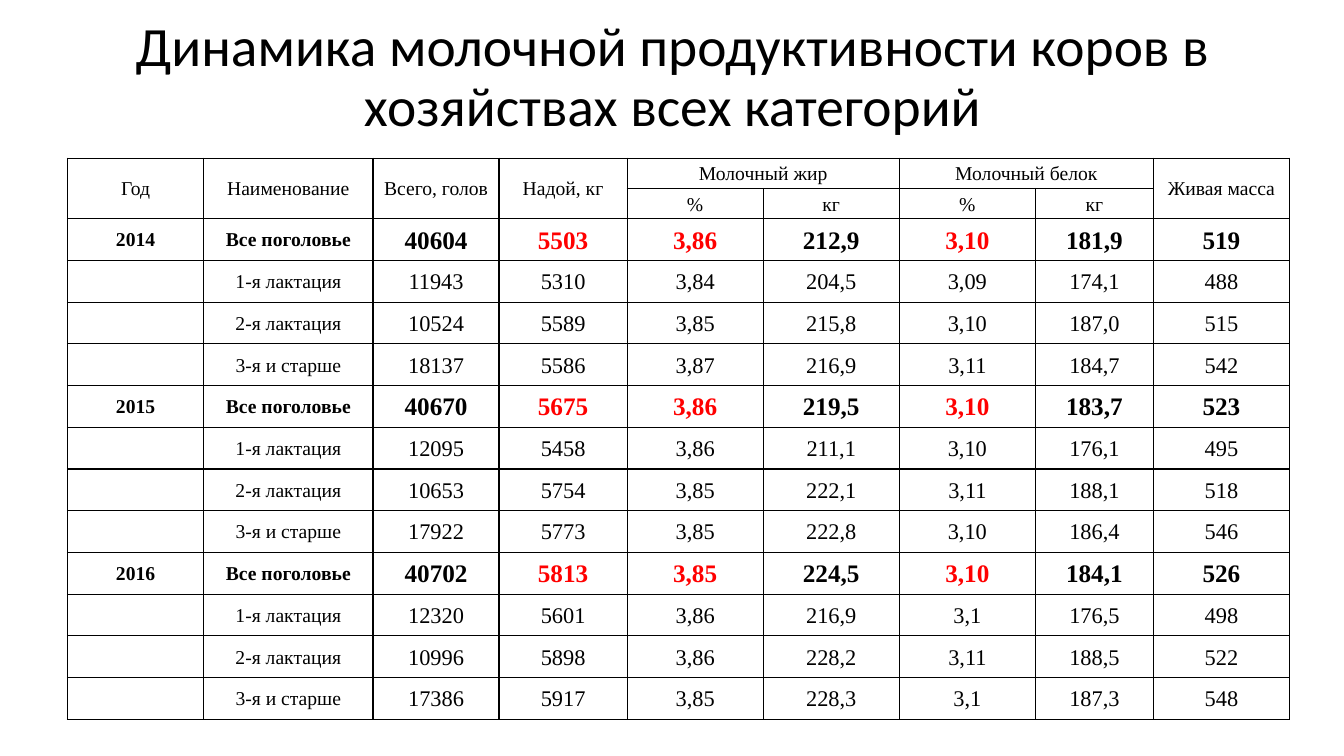
import dataclasses

import lxml.etree
import pptx
import pptx.dml.color
import pptx.enum.text
import pptx.oxml.ns
import pptx.util

Inches = pptx.util.Inches


@dataclasses.dataclass(frozen=True)
class Theme:
    """Hold the colours, fonts and type sizes of the slide."""
    black: str = "000000"
    red: str = "FF0000"
    head: str = "Calibri"
    body: str = "Times New Roman"
    title: float = 39.6
    label: float = 14
    value: float = 16
    total: float = 18
    rule: float = 1


THEME = Theme()
TITLE = "Динамика молочной продуктивности коров в хозяйствах всех категорий"
COLS = (1.35, 1.68, 1.25, 1.27, 1.35, 1.35, 1.35, 1.17, 1.35)
HEADS = (
    ("Год", "Наименование", "Всего, голов", "Надой, кг", "Молочный жир", "",
     "Молочный белок", "", "Живая масса"),
    ("", "", "", "", "%", "кг", "%", "кг", ""),
)
MERGES = [(0, col, 1, col) for col in (0, 1, 2, 3, 8)]
MERGES += [(0, col, 0, col + 1) for col in (4, 6)]
GROUPS = ("Все поголовье", "1-я лактация", "2-я лактация", "3-я и старше")
HERD = {
    "2014": ("40604 5503 3,86 212,9 3,10 181,9 519",
             "11943 5310 3,84 204,5 3,09 174,1 488",
             "10524 5589 3,85 215,8 3,10 187,0 515",
             "18137 5586 3,87 216,9 3,11 184,7 542"),
    "2015": ("40670 5675 3,86 219,5 3,10 183,7 523",
             "12095 5458 3,86 211,1 3,10 176,1 495",
             "10653 5754 3,85 222,1 3,11 188,1 518",
             "17922 5773 3,85 222,8 3,10 186,4 546"),
    "2016": ("40702 5813 3,85 224,5 3,10 184,1 526",
             "12320 5601 3,86 216,9 3,1 176,5 498",
             "10996 5898 3,86 228,2 3,11 188,5 522",
             "17386 5917 3,85 228,3 3,1 187,3 548"),
}
RED_COLS = (3, 4, 6)
HEAD_ROW = 0.3
LEFT, TOP, WIDTH, HEIGHT = 0.67, 1.57, 12.12, 5.57


def style(frame, font, size, color, bold, space):
    """Centre the text of a frame and set its font."""
    frame.word_wrap = True
    frame.vertical_anchor = pptx.enum.text.MSO_ANCHOR.MIDDLE
    for para in frame.paragraphs:
        para.alignment = pptx.enum.text.PP_ALIGN.CENTER
        para.line_spacing = space
        for run in para.runs:
            run.font.name = font
            run.font.size = pptx.util.Pt(size)
            run.font.bold = bold
            run.font.color.rgb = pptx.dml.color.RGBColor.from_string(color)


def add_title(slide):
    """Place the heading in the title placeholder."""
    title = slide.shapes.title
    title.left, title.top = Inches(0.92), Inches(0.31)
    title.width, title.height = Inches(11.5), Inches(1.54)
    frame = title.text_frame
    frame.text = TITLE
    frame.auto_size = pptx.enum.text.MSO_AUTO_SIZE.NONE
    frame.margin_top, frame.margin_bottom = Inches(0.05), Inches(0.65)
    style(frame, THEME.head, THEME.title, THEME.black, False, 0.9)


def add_rules(cell):
    """Draw a solid line on each side of a cell."""
    props = cell._tc.get_or_add_tcPr()
    name = pptx.oxml.ns.qn
    for side in "LRTB":
        line = lxml.etree.SubElement(props, name(f"a:ln{side}"))
        line.set("w", str(pptx.util.Pt(THEME.rule)))
        fill = lxml.etree.SubElement(line, name("a:solidFill"))
        lxml.etree.SubElement(fill, name("a:srgbClr")).set("val", THEME.black)


def fill_cell(cell, text, size, color, bold):
    """Write one cell with its margins, lines and font."""
    cell.text_frame.text = text
    cell.margin_left = cell.margin_right = Inches(0.06)
    cell.margin_top = cell.margin_bottom = 0
    cell.vertical_anchor = pptx.enum.text.MSO_ANCHOR.MIDDLE
    add_rules(cell)
    cell.fill.background()
    style(cell.text_frame, THEME.body, size, color, bold, 1.07)


def list_rows():
    """Join the heads with the rows of each year."""
    rows = [(texts, False) for texts in HEADS]
    for year, lines in HERD.items():
        for group, line in zip(GROUPS, lines):
            total = group == GROUPS[0]
            rows.append(((year if total else "", group, *line.split()), total))
    return rows


def add_grid(slide):
    """Build the table of milk yield by year and group."""
    rows = list_rows()
    heads = len(HEADS)
    grid = slide.shapes.add_table(
        len(rows), len(COLS), Inches(LEFT), Inches(TOP),
        Inches(WIDTH), Inches(HEIGHT)).table
    grid.first_row = grid.horz_banding = False
    for col, width in zip(grid.columns, COLS):
        col.width = Inches(width)
    body_row = (HEIGHT - heads * HEAD_ROW) / (len(rows) - heads)
    for i, (texts, total) in enumerate(rows):
        grid.rows[i].height = Inches(HEAD_ROW if i < heads else body_row)
        for j, text in enumerate(texts):
            size = THEME.total if total else THEME.value
            if i < heads or j < 2:
                size = THEME.label
            color = THEME.red if total and j in RED_COLS else THEME.black
            fill_cell(grid.cell(i, j), text, size, color, total)
    for top, left, low, right in MERGES:
        grid.cell(top, left).merge(grid.cell(low, right))


def main():
    """Make the slide and save it."""
    deck = pptx.Presentation()
    deck.slide_width, deck.slide_height = Inches(13.33), Inches(7.5)
    slide = deck.slides.add_slide(deck.slide_layouts[5])
    add_title(slide)
    add_grid(slide)
    deck.save("out.pptx")


if __name__ == "__main__":
    main()
